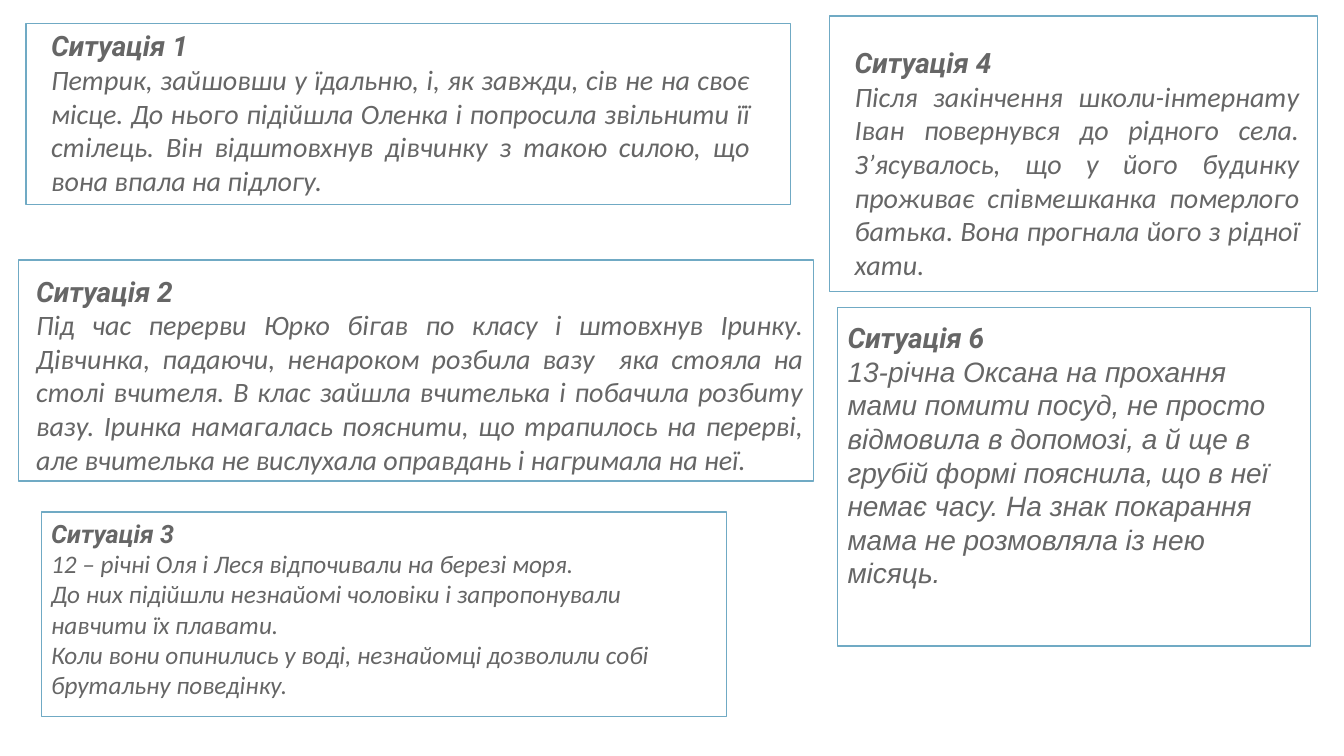
from pptx import Presentation
from pptx.dml.color import RGBColor
from pptx.enum.shapes import MSO_SHAPE
from pptx.enum.text import MSO_ANCHOR, MSO_AUTO_SIZE, PP_ALIGN
from pptx.util import Pt

RECT = MSO_SHAPE.RECTANGLE
MIDDLE = MSO_ANCHOR.MIDDLE
GROW = MSO_AUTO_SIZE.SHAPE_TO_FIT_TEXT
JUSTIFY, LEFT = PP_ALIGN.JUSTIFY, PP_ALIGN.LEFT

WHITE, BLUE, GREY = "FFFFFF", "70AAC4", "666666"
HEAD_FONT = "Roboto"

# Each situation: heading, body, frame box, text box, size, body font, alignment
SITUATIONS = [
    ("Ситуація 1",
     ["Петрик, зайшовши у їдальню, і, як завжди, сів не на своє місце. "
      "До нього підійшла Оленка і попросила звільнити її стілець. "
      "Він відштовхнув дівчинку з такою силою, що вона впала на підлогу."],
     (18.7, 16.6, 545.8, 129.6), (29.5, 16.6, 513.4, 128.2), 20, "Calibri", JUSTIFY),
    ("Ситуація 2",
     ["Під час перерви Юрко бігав по класу і штовхнув Іринку. "
      "Дівчинка, падаючи, ненароком розбила вазу  яка стояла на столі вчителя. "
      "В клас зайшла вчителька і побачила розбиту вазу. "
      "Іринка намагалась пояснити, що трапилось на перерві, "
      "але вчителька не вислухала оправдань і нагримала на неї."],
     (13, 185.8, 568.1, 157.7), (18.7, 191.5, 562.3, 152.6), 20, "Calibri", JUSTIFY),
    ("Ситуація 3",
     ["12 – річні Оля і Леся відпочивали на березі моря.",
      "До них підійшли незнайомі чоловіки і запропонували",
      "навчити їх плавати.",
      "Коли вони опинились у воді, незнайомці дозволили собі",
      "брутальну поведінку."],
     (29.5, 365.8, 489.6, 146.2), (29.5, 365.8, 483.8, 138.2), 18, "Calibri", JUSTIFY),
    ("Ситуація 4",
     ["Після закінчення школи-інтернату Іван повернувся до рідного села. "
      "З’ясувалось, що у його будинку проживає співмешканка померлого батька. "
      "Вона прогнала його з рідної хати."],
     (592.6, 11.5, 348.5, 196.6), (603.4, 28.1, 331.9, 177.1), 20, "Calibri", JUSTIFY),
    ("Ситуація 6",
     ["13-річна Оксана на прохання мами помити посуд, не просто відмовила "
      "в допомозі, а й ще в грубій формі пояснила, що в неї немає часу. "
      "На знак покарання мама не розмовляла із нею місяць."],
     (598.3, 219.6, 337.7, 241.9), (598.3, 224.6, 337.7, 200.9), 20, "Arial", LEFT),
]


def rgb(value):
    return RGBColor.from_string(value)


def add_frame(s, box):
    sp = s.shapes.add_shape(RECT, *map(Pt, box))
    sp.shadow.inherit = False
    sp.fill.solid()
    sp.fill.fore_color.rgb = rgb(WHITE)
    sp.line.color.rgb = rgb(BLUE)
    sp.line.width = Pt(1)


def add_text(s, box, heading, body, size, body_font, align):
    tf = s.shapes.add_textbox(*map(Pt, box)).text_frame
    tf.word_wrap = True
    tf.auto_size = GROW
    tf.vertical_anchor = MIDDLE
    for i, text in enumerate([heading] + body):
        p = tf.add_paragraph() if i else tf.paragraphs[0]
        p.text = text
        p.alignment = align
        p.font.name = body_font if i else HEAD_FONT
        p.font.size = Pt(size)
        p.font.bold = i == 0
        p.font.italic = True
        p.font.color.rgb = rgb(GREY)


def main():
    prs = Presentation()
    prs.slide_width, prs.slide_height = Pt(960), Pt(540)
    s = prs.slides.add_slide(prs.slide_layouts[6])  # blank layout

    # Framed situations
    for heading, body, frame, text_box, size, font, align in SITUATIONS:
        add_frame(s, frame)
        add_text(s, text_box, heading, body, size, font, align)

    prs.save("out.pptx")


if __name__ == "__main__":
    main()
